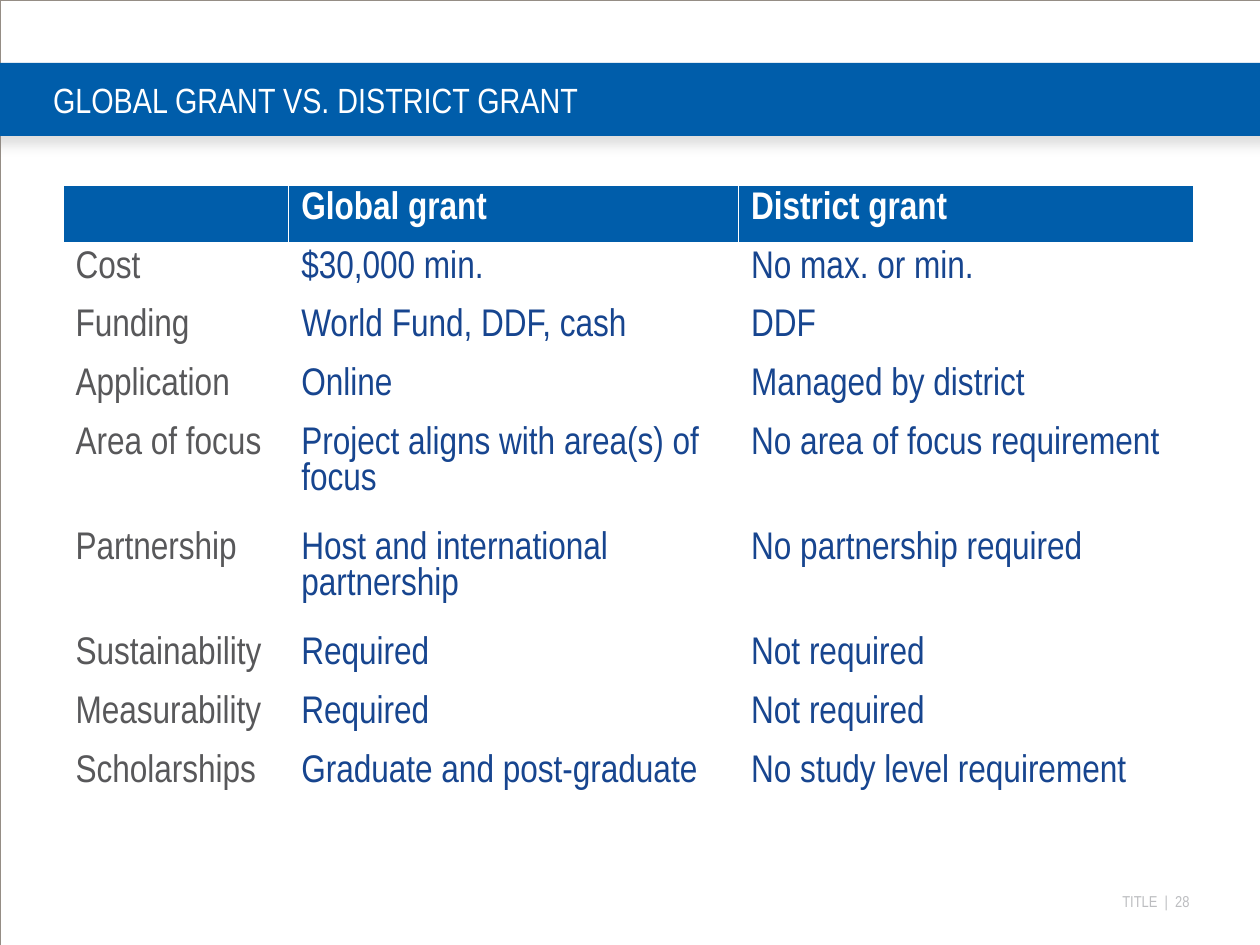
"""Build the slide that compares global grants with district grants."""
from lxml import etree
from pptx import Presentation
from pptx.dml.color import RGBColor
from pptx.enum.shapes import MSO_SHAPE
from pptx.enum.text import MSO_ANCHOR, PP_ALIGN
from pptx.oxml.ns import qn
from pptx.util import Cm, Pt

RECTANGLE = MSO_SHAPE.RECTANGLE
TOP, MIDDLE = MSO_ANCHOR.TOP, MSO_ANCHOR.MIDDLE
LEFT, RIGHT = PP_ALIGN.LEFT, PP_ALIGN.RIGHT

TITLE = "GLOBAL GRANT VS. DISTRICT GRANT"
FOOTER = "TITLE  |  28"
ROWS = [
    ("", "Global grant", "District grant"),
    ("Cost", "$30,000 min.", "No max. or min."),
    ("Funding", "World Fund, DDF, cash", "DDF"),
    ("Application", "Online", "Managed by district"),
    ("Area of focus", "Project aligns with area(s) of focus", "No area of focus requirement"),
    ("Partnership", "Host and international partnership", "No partnership required"),
    ("Sustainability", "Required", "Not required"),
    ("Measurability", "Required", "Not required"),
    ("Scholarships", "Graduate and post-graduate", "No study level requirement"),
]
TWO_LINE_ROWS = {"Area of focus", "Partnership"}
COLUMN_WIDTHS = (4.55, 9.07, 9.17)
ROW_HEIGHT, TWO_LINE_HEIGHT = 1.18, 2.12
SLIDE_WIDTH, SLIDE_HEIGHT = 25.4, 19.05
BAR_TOP, BAR_HEIGHT = 1.27, 1.47

FONT = "Arial Narrow"
COLORS = {
    "band": "005DAA",
    "white": "FFFFFF",
    "label": "58585A",
    "value": "17458F",
    "footer": "BCBDC0",
    "frame": "958D85",
    "shadow": "808080",
}


def color(name):
    return RGBColor.from_string(COLORS[name])


def style(paragraph, size, color_name, bold=False):
    font = paragraph.font
    font.name, font.size, font.bold = FONT, Pt(size), bold
    font.color.rgb = color(color_name)


def add_text(slide, text, box, size, color_name, anchor=TOP, alignment=LEFT):
    frame = slide.shapes.add_textbox(*map(Cm, box)).text_frame
    frame.margin_left = frame.margin_right = frame.margin_top = frame.margin_bottom = 0
    frame.word_wrap = True
    frame.vertical_anchor = anchor
    frame.text = text
    frame.paragraphs[0].alignment = alignment
    style(frame.paragraphs[0], size, color_name)


def add_color(parent, name):
    fill = etree.SubElement(parent, qn("a:solidFill"))
    etree.SubElement(fill, qn("a:srgbClr"), val=COLORS[name])


def add_frame(slide):
    frame = slide.shapes.add_shape(RECTANGLE, 0, 0, Cm(SLIDE_WIDTH), Cm(SLIDE_HEIGHT))
    frame.shadow.inherit = False
    frame.fill.background()
    frame.line.color.rgb = color("frame")
    frame.line.width = Pt(0.13)


def add_bar(slide):
    bar = slide.shapes.add_shape(RECTANGLE, Cm(-0.2), Cm(BAR_TOP), Cm(25.83), Cm(BAR_HEIGHT))
    bar.shadow.inherit = False
    bar.fill.solid()
    bar.fill.fore_color.rgb = color("band")
    bar.line.fill.background()
    effects = bar._element.spPr.find(qn("a:effectLst"))
    shadow = etree.SubElement(
        effects, qn("a:outerShdw"), blurRad=str(Pt(7)), dist=str(Pt(4.8)),
        dir="5400000", algn="t", rotWithShape="0")
    shade = etree.SubElement(shadow, qn("a:srgbClr"), val=COLORS["shadow"])
    etree.SubElement(shade, qn("a:alpha"), val="25000")


def set_borders(cell, is_header, is_first_body):
    widths = {"L": 1, "R": 1, "T": 3 if is_first_body else 1, "B": 3 if is_header else 1}
    properties = cell._tc.get_or_add_tcPr()
    for side, width in widths.items():
        add_color(etree.SubElement(properties, qn(f"a:ln{side}"), w=str(Pt(width))), "white")


def add_grant_table(slide):
    heights = [TWO_LINE_HEIGHT if row[0] in TWO_LINE_ROWS else ROW_HEIGHT for row in ROWS]
    table = slide.shapes.add_table(
        len(ROWS), len(COLUMN_WIDTHS), Cm(1.27), Cm(3.73),
        Cm(sum(COLUMN_WIDTHS)), Cm(sum(heights))).table
    table.horz_banding = False
    for column, width in zip(table.columns, COLUMN_WIDTHS):
        column.width = Cm(width)
    for row_index, (row, height) in enumerate(zip(ROWS, heights)):
        table.rows[row_index].height = Cm(height)
        is_header = row_index == 0
        for column_index, text in enumerate(row):
            cell = table.cell(row_index, column_index)
            set_borders(cell, is_header, row_index == 1)
            if is_header:
                cell.fill.solid()
                cell.fill.fore_color.rgb = color("band")
                text_color = "white"
            else:
                cell.fill.background()
                text_color = "value" if column_index else "label"
            cell.text = text
            style(cell.text_frame.paragraphs[0], 22, text_color, is_header)


def main():
    presentation = Presentation()
    presentation.slide_width, presentation.slide_height = Cm(SLIDE_WIDTH), Cm(SLIDE_HEIGHT)
    slide = presentation.slides.add_slide(presentation.slide_layouts[6])
    add_text(slide, FOOTER, (19.69, 17.98, 4.29, 0.38), 9, "footer", alignment=RIGHT)
    add_frame(slide)
    add_bar(slide)
    add_grant_table(slide)
    add_text(slide, TITLE, (1.07, BAR_TOP, 24.33, BAR_HEIGHT), 20, "white", anchor=MIDDLE)
    presentation.save("out.pptx")


if __name__ == "__main__":
    main()
